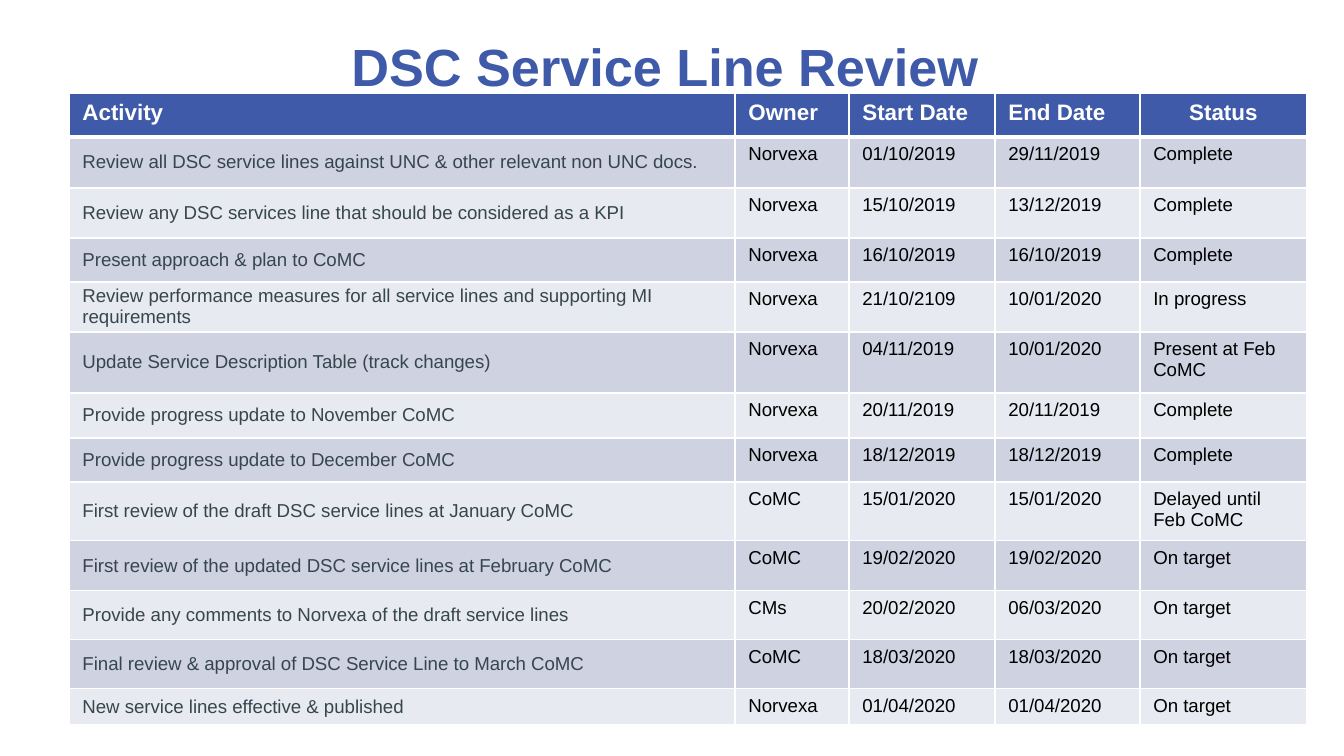
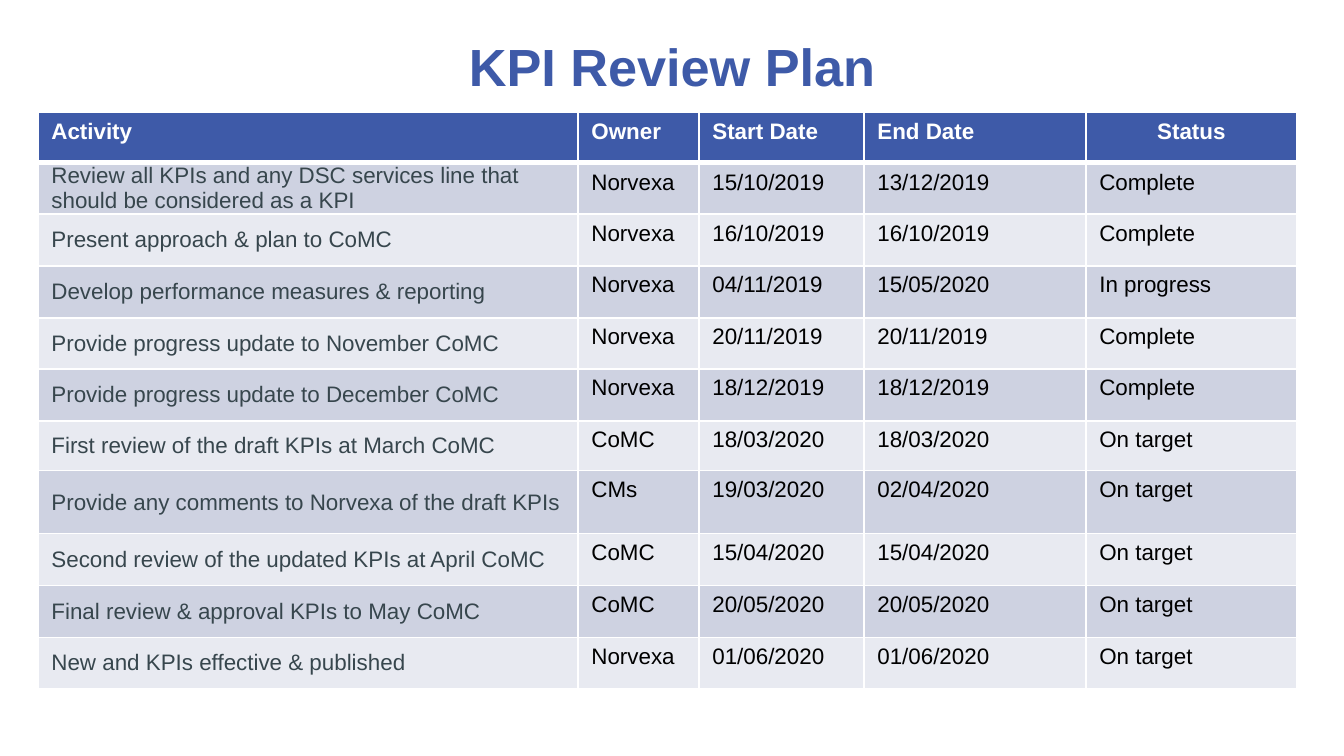
from lxml import etree
from pptx import Presentation
from pptx.dml.color import RGBColor
from pptx.enum.text import MSO_ANCHOR, MSO_AUTO_SIZE, PP_ALIGN
from pptx.oxml.ns import qn
from pptx.util import Emu, Pt

MIDDLE, TOP = MSO_ANCHOR.MIDDLE, MSO_ANCHOR.TOP
CENTER, LEFT = PP_ALIGN.CENTER, PP_ALIGN.LEFT
NO_AUTOFIT = MSO_AUTO_SIZE.NONE

BLUE = RGBColor(0x3E, 0x5A, 0xA8)
DARK_BAND = RGBColor(0xCE, 0xD2, 0xE1)
LIGHT_BAND = RGBColor(0xE8, 0xEA, 0xF1)
SLATE = RGBColor(0x37, 0x46, 0x4D)
WHITE = RGBColor(0xFF, 0xFF, 0xFF)
BLACK = RGBColor(0x00, 0x00, 0x00)

PX = 914400 / 134.4  # EMU in one px
TITLE_BOX = {"left": 67, "top": 19, "width": 1210, "height": 94}
TITLE_FONT = {"name": "Arial", "size": Pt(28), "bold": True}
HEADINGS = ("Activity", "Owner", "Start Date", "End Date", "Status")
HEADING_SIZE = 12

# Content of both plans: activity, owner, start, end, status
plans = [
    {
        "title": "DSC Service Line Review ",
        "left": 69, "top": 93, "text_size": 10,
        "columns": (666, 114, 146, 145, 167),
        "heights": (44, 51, 50, 44, 50, 61, 45, 44, 59, 50, 49, 49, 36),
        "activities": [
            ("Review all DSC service lines against UNC & other relevant non UNC docs.",
             "Norvexa", "01/10/2019", "29/11/2019", "Complete"),
            ("Review any DSC services line that should be considered as a KPI",
             "Norvexa", "15/10/2019", "13/12/2019", "Complete"),
            ("Present approach & plan to CoMC",
             "Norvexa", "16/10/2019", "16/10/2019", "Complete"),
            ("Review performance measures for all service lines and supporting MI requirements",
             "Norvexa", "21/10/2109", "10/01/2020", "In progress"),
            ("Update Service Description Table (track changes)",
             "Norvexa", "04/11/2019", "10/01/2020", "Present at Feb CoMC"),
            ("Provide progress update to November CoMC",
             "Norvexa", "20/11/2019", "20/11/2019", "Complete"),
            ("Provide progress update to December CoMC",
             "Norvexa", "18/12/2019", "18/12/2019", "Complete"),
            ("First review of the draft DSC service lines at January CoMC",
             "CoMC", "15/01/2020", "15/01/2020", "Delayed until Feb CoMC"),
            ("First review of the updated DSC service lines at February CoMC",
             "CoMC", "19/02/2020", "19/02/2020", "On target"),
            ("Provide any comments to Norvexa of the draft service lines",
             "CMs", "20/02/2020", "06/03/2020", "On target"),
            ("Final review & approval of DSC Service Line to March CoMC",
             "CoMC", "18/03/2020", "18/03/2020", "On target"),
            ("New service lines effective & published",
             "Norvexa", "01/04/2020", "01/04/2020", "On target"),
        ],
    },
    {
        "title": "KPI Review Plan",
        "left": 38, "top": 112, "text_size": 12,
        "columns": (540, 121, 165, 222, 211),
        "heights": (51, 51, 52, 52, 51, 52, 50, 63, 52, 52, 51),
        "activities": [
            ("Review all KPIs and any DSC services line that should be considered as a KPI",
             "Norvexa", "15/10/2019", "13/12/2019", "Complete"),
            ("Present approach & plan to CoMC",
             "Norvexa", "16/10/2019", "16/10/2019", "Complete"),
            ("Develop performance measures & reporting",
             "Norvexa", "04/11/2019", "15/05/2020", "In progress"),
            ("Provide progress update to November CoMC",
             "Norvexa", "20/11/2019", "20/11/2019", "Complete"),
            ("Provide progress update to December CoMC",
             "Norvexa", "18/12/2019", "18/12/2019", "Complete"),
            ("First review of the draft KPIs at March CoMC",
             "CoMC", "18/03/2020", "18/03/2020", "On target"),
            ("Provide any comments to Norvexa of the draft KPIs",
             "CMs", "19/03/2020", "02/04/2020", "On target"),
            ("Second review of the updated KPIs at April CoMC",
             "CoMC", "15/04/2020", "15/04/2020", "On target"),
            ("Final review & approval KPIs to May CoMC",
             "CoMC", "20/05/2020", "20/05/2020", "On target"),
            ("New and KPIs effective & published",
             "Norvexa", "01/06/2020", "01/06/2020", "On target"),
        ],
    },
]


def px(count):
    return Emu(round(count * PX))


def add_borders(cell, widths):
    """Give the cell white borders; widths maps each side to points."""
    properties = cell._tc.get_or_add_tcPr()
    for position, (side, points) in enumerate(widths.items()):
        line = etree.Element(qn(f"a:ln{side}"), w=str(Pt(points)))
        fill = etree.SubElement(line, qn("a:solidFill"))
        etree.SubElement(fill, qn("a:srgbClr"), val=str(WHITE))
        properties.insert(position, line)


prs = Presentation()
prs.slide_width, prs.slide_height = px(1344), px(756)

for plan in plans:
    slide = prs.slides.add_slide(prs.slide_layouts[5])

    # Title
    title = slide.shapes.title
    for side, length in TITLE_BOX.items():
        setattr(title, side, px(length))
    title.text_frame.text = plan["title"]
    title.text_frame.auto_size = NO_AUTOFIT
    title.text_frame.vertical_anchor = MIDDLE
    heading = title.text_frame.paragraphs[0]
    heading.alignment = CENTER
    for attribute, value in TITLE_FONT.items():
        setattr(heading.font, attribute, value)
    heading.font.color.rgb = BLUE

    # Plan table
    rows = [HEADINGS] + plan["activities"]
    schedule = slide.shapes.add_table(
        len(rows), len(HEADINGS), px(plan["left"]), px(plan["top"]),
        px(sum(plan["columns"])), px(sum(plan["heights"]))).table
    for column, width in zip(schedule.columns, plan["columns"]):
        column.width = px(width)
    for row, height in zip(schedule.rows, plan["heights"]):
        row.height = px(height)

    # Headings, activities and their bands
    for r, entries in enumerate(rows):
        is_heading = r == 0
        band = BLUE if is_heading else DARK_BAND if r % 2 else LIGHT_BAND
        for c, entry in enumerate(entries):
            is_activity = c == 0 and not is_heading
            cell = schedule.cell(r, c)
            cell.text = entry
            cell.fill.solid()
            cell.fill.fore_color.rgb = band
            cell.vertical_anchor = MIDDLE if is_activity else TOP
            if is_activity:
                cell.margin_right = cell.margin_top = cell.margin_bottom = 0
            paragraph = cell.text_frame.paragraphs[0]
            paragraph.alignment = CENTER if entry == "Status" else LEFT
            font_format = {
                "name": "Arial",
                "size": Pt(HEADING_SIZE if is_heading else plan["text_size"]),
                "bold": is_heading,
            }
            for attribute, value in font_format.items():
                setattr(paragraph.font, attribute, value)
            paragraph.font.color.rgb = (
                WHITE if is_heading else SLATE if is_activity else BLACK)
            add_borders(cell, {"L": 1, "R": 1, "T": 3 if r == 1 else 1,
                               "B": 3 if is_heading else 1})

prs.save("out.pptx")
